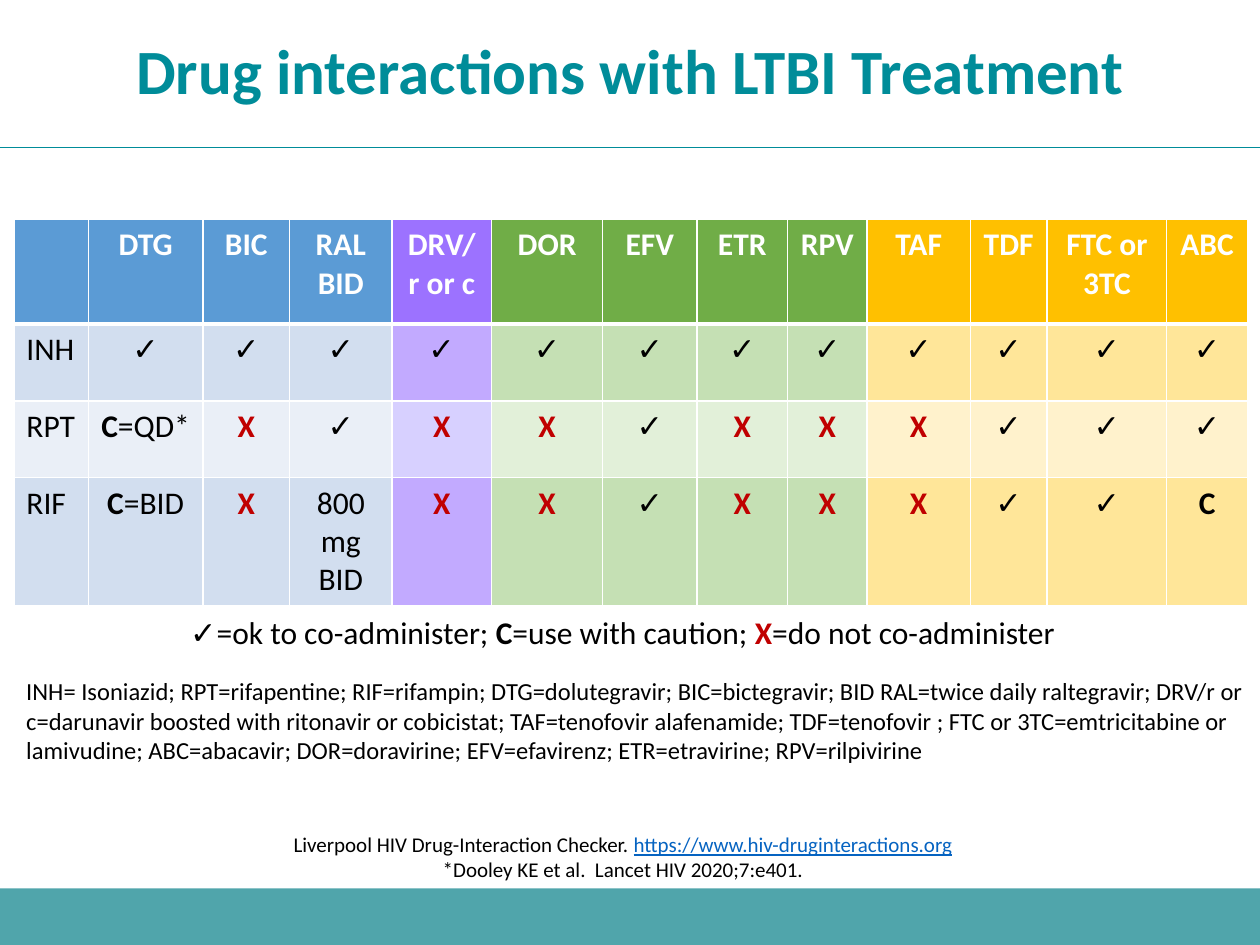
from dataclasses import dataclass

import pptx
import pptx.dml.color
import pptx.enum.shapes
import pptx.enum.text
import pptx.oxml
import pptx.oxml.ns
import pptx.util
from pptx.util import Cm

ALIGN = pptx.enum.text.PP_ALIGN
ANCHOR = pptx.enum.text.MSO_ANCHOR


@dataclass(frozen=True)
class Theme:
    font: str = "Calibri"
    title: str = "008C99"
    band: str = "50A5AB"
    ink: str = "000000"
    paper: str = "FFFFFF"
    danger: str = "C00000"
    link: str = "0563C1"
    title_size: int = 36
    body_size: int = 18
    note_size: int = 14
    source_size: int = 12


THEME = Theme()

# fmt: off
DRUG_CLASSES = [
    (4, ("5B9BD5", "D2DEEF", "EAEFF7")),
    (1, ("9C72FF", "C2AAFF", "D7D0FF")),
    (4, ("70AD47", "C5E0B4", "E2F0D9")),
    (4, ("FFC000", "FFE699", "FFF2CC")),
]
COLUMN_WIDTHS = [1.5, 2.31, 1.75, 2.06, 2.01, 2.24, 1.9, 1.83, 1.6, 2.08, 1.55, 2.41, 1.63]
ROW_HEIGHTS = [2.11, 1.55, 1.55, 2.21]
OK, AVOID, CAUTION = "✓", "|X|", "|C|"
ROWS = [
    ["", "DTG", "BIC", "RAL\nBID", "DRV/r or c", "DOR", "EFV", "ETR", "RPV",
     "TAF", "TDF", "FTC or 3TC", "ABC"],
    ["INH"] + [OK] * 12,
    ["RPT", "|C|=QD*", AVOID, OK, AVOID, AVOID, OK, AVOID, AVOID, AVOID, OK, OK, OK],
    ["RIF", "|C|=BID", AVOID, "800 mg BID", AVOID, AVOID, OK, AVOID, AVOID, AVOID,
     OK, OK, CAUTION],
]
# fmt: on
LEGEND = "✓=ok to co-administer; |C|=use with caution; |X|=do not co-administer"
ABBREVIATIONS = (
    "INH= Isoniazid; RPT=rifapentine; RIF=rifampin; DTG=dolutegravir; "
    "BIC=bictegravir; BID RAL=twice daily raltegravir; DRV/r or c=darunavir "
    "boosted with ritonavir or cobicistat; TAF=tenofovir alafenamide; "
    "TDF=tenofovir ; FTC or 3TC=emtricitabine or lamivudine; ABC=abacavir; "
    "DOR=doravirine; EFV=efavirenz; ETR=etravirine; RPV=rilpivirine"
)
SOURCES = (
    "Liverpool HIV Drug-Interaction Checker. |https://www.hiv-druginteractions.org|\n"
    "*Dooley KE et al.  Lancet HIV 2020;7:e401."
)


def rgb(value):
    return pptx.dml.color.RGBColor.from_string(value)


def style_span(span, size, color, bold=False):
    span.font.name = THEME.font
    span.font.size = pptx.util.Pt(size)
    span.font.color.rgb = rgb(color)
    span.font.bold = bold


def write_text(frame, text, size, align, color=THEME.ink, bold=False):
    for number, line in enumerate(text.split("\n")):
        para = frame.add_paragraph() if number else frame.paragraphs[0]
        para.alignment = align
        for position, part in enumerate(line.split("|")):
            if not part:
                continue
            span = para.add_run()
            span.text = part
            marked = position % 2 == 1
            is_link = marked and part.startswith("https")
            style_span(span, size, color, bold or (marked and not is_link))
            if is_link:
                span.font.color.rgb = rgb(THEME.link)
                span.font.underline = True
            elif marked and part == "X":
                span.font.color.rgb = rgb(THEME.danger)


def add_text(page, place, text, size, align):
    box = page.shapes.add_textbox(*map(Cm, place))
    box.text_frame.word_wrap = True
    write_text(box.text_frame, text, size, align)


def add_frame(page):
    band = page.shapes.add_shape(
        pptx.enum.shapes.MSO_SHAPE.RECTANGLE, 0, Cm(17.91), Cm(25.4), Cm(1.14)
    )
    band.shadow.inherit = False
    band.fill.solid()
    band.fill.fore_color.rgb = rgb(THEME.band)
    band.line.fill.background()

    rule = page.shapes.add_connector(
        pptx.enum.shapes.MSO_CONNECTOR.STRAIGHT, 0, Cm(2.97), Cm(25.4), Cm(2.97)
    )
    rule.line.color.rgb = rgb(THEME.title)
    rule.line.width = pptx.util.Pt(0.5)
    properties = rule._element.spPr
    properties.append(properties.makeelement(pptx.oxml.ns.qn("a:effectLst"), {}))


def add_title(page, text):
    title = page.shapes.title
    title.left, title.top, title.width, title.height = 0, 0, Cm(25.4), Cm(2.97)
    frame = title.text_frame
    frame.text = text
    frame.word_wrap = True
    frame.auto_size = pptx.enum.text.MSO_AUTO_SIZE.NONE
    frame.vertical_anchor = ANCHOR.MIDDLE
    para = frame.paragraphs[0]
    para.alignment = ALIGN.CENTER
    para.line_spacing = 0.9
    style_span(para.runs[0], THEME.title_size, THEME.title, True)


def set_borders(cell, top, bottom):
    properties = cell._tc.get_or_add_tcPr()
    for side, points in (("L", 1), ("R", 1), ("T", top), ("B", bottom)):
        properties.append(pptx.oxml.parse_xml(
            f'<a:ln{side} {pptx.oxml.ns.nsdecls("a")} w="{pptx.util.Pt(points)}">'
            f'<a:solidFill><a:srgbClr val="{THEME.paper}"/></a:solidFill></a:ln{side}>'
        ))


def add_interactions(page):
    frame = page.shapes.add_table(
        len(ROWS), len(COLUMN_WIDTHS), Cm(0.28), Cm(4.42),
        Cm(sum(COLUMN_WIDTHS)), Cm(sum(ROW_HEIGHTS)),
    )
    table = frame.table
    for column, width in zip(table.columns, COLUMN_WIDTHS):
        column.width = Cm(width)
    for row, height in zip(table.rows, ROW_HEIGHTS):
        row.height = Cm(height)

    palettes = [shades for count, shades in DRUG_CLASSES for _ in range(count)]
    for r, values in enumerate(ROWS):
        header = r == 0
        shade = 0 if header else 2 - r % 2
        for c, text in enumerate(values):
            cell = table.cell(r, c)
            set_borders(cell, 3 if r == 1 else 1, 3 if header else 1)
            cell.fill.solid()
            cell.fill.fore_color.rgb = rgb(palettes[c][shade])
            write_text(
                cell.text_frame, text, THEME.body_size,
                ALIGN.CENTER if c else ALIGN.LEFT,
                THEME.paper if header else THEME.ink, header,
            )


def main():
    deck = pptx.Presentation()
    deck.slide_width, deck.slide_height = Cm(25.4), Cm(19.05)
    page = deck.slides.add_slide(deck.slide_layouts[5])
    add_frame(page)
    add_title(page, "Drug interactions with LTBI Treatment")
    add_interactions(page)
    add_text(page, (0.28, 13.51, 25.12, 2.06), ABBREVIATIONS, THEME.note_size, ALIGN.LEFT)
    add_text(page, (0.28, 12.24, 24.54, 1.8), LEGEND, THEME.body_size, ALIGN.CENTER)
    add_text(page, (0, 16.64, 25.12, 1.27), SOURCES, THEME.source_size, ALIGN.CENTER)
    deck.save("out.pptx")


if __name__ == "__main__":
    main()
